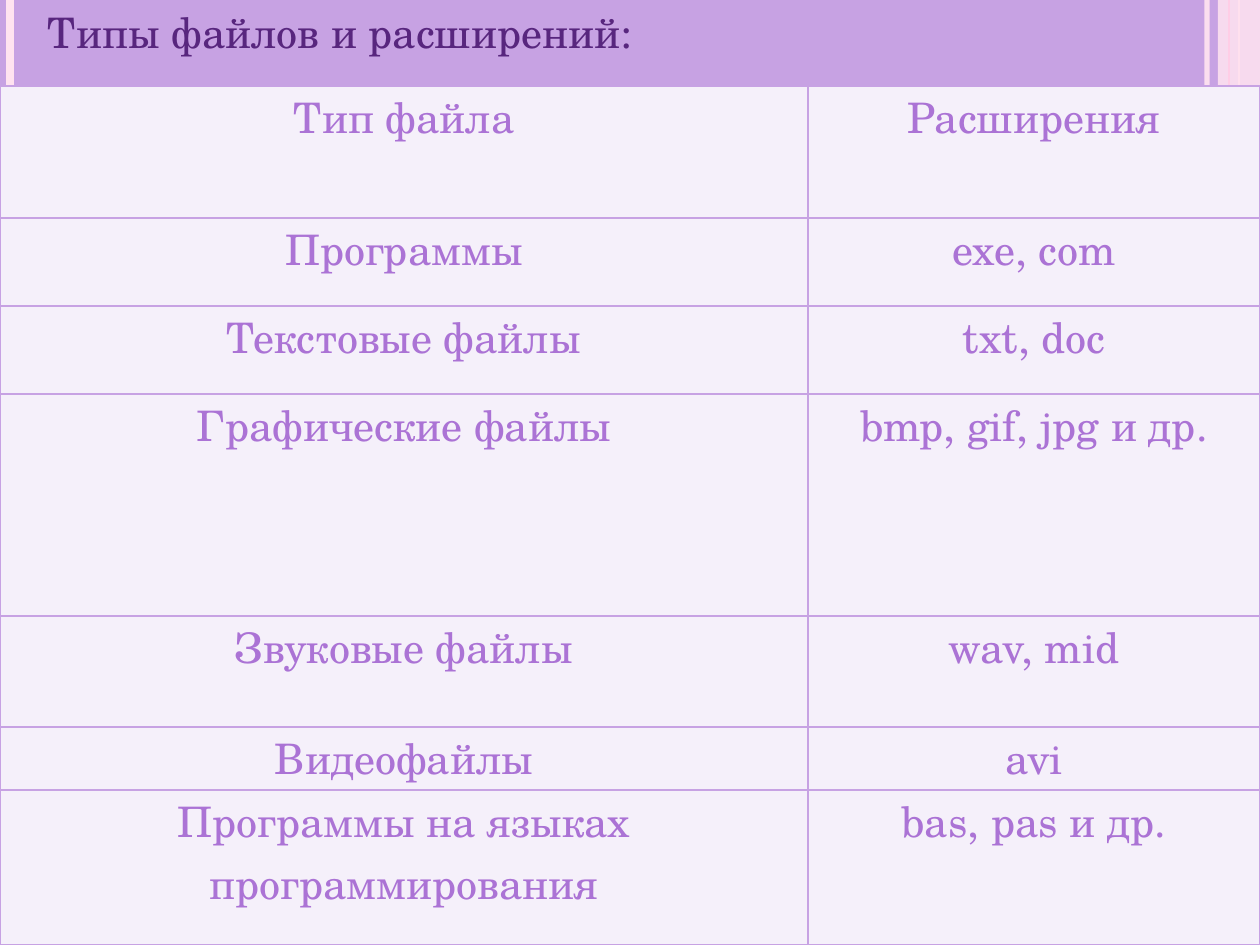
from dataclasses import dataclass

from lxml import etree
from pptx import Presentation
from pptx import util as u
from pptx.dml.color import RGBColor
from pptx.enum import shapes, text
from pptx.oxml.ns import qn

SLIDE_W, SLIDE_H = 1260, 945
HEADER_H = 86

FILE_TYPES = [
    ("Тип файла", "Расширения"),
    ("Программы", "exe, com"),
    ("Текстовые файлы", "txt, doc"),
    ("Графические файлы", "bmp, gif, jpg и др."),
    ("Звуковые файлы", "wav, mid"),
    ("Видеофайлы", "avi"),
    ("Программы на языках программирования", "bas, pas и др."),
]
ROW_HEIGHTS = [132, 88, 88, 222, 111, 63, 155]
COLUMN_WIDTHS = [808, 452]


@dataclass(frozen=True)
class Theme:
    font: str = "TeX Gyre Schola"
    size: int = 24
    background: str = "C7A2E3"
    title: str = "58267E"
    cell_text: str = "AB73D5"
    cell_fill: str = "F5F0FA"
    border: str = "C7A2E3"
    pale_pink: str = "FFE3F0"
    pink: str = "FFCDE6"


THEME = Theme()


def px(length):
    return u.Emu(round(length * 914400 / 126))


def rgb(color):
    return RGBColor.from_string(color)


def set_alpha(fill_parent, percent):
    color = fill_parent.find(".//" + qn("a:srgbClr"))
    etree.SubElement(color, qn("a:alpha"), val=str(percent * 1000))


def write(paragraph, words, color):
    run = paragraph.add_run()
    run.text = words
    run.font.name = THEME.font
    run.font.size = u.Pt(THEME.size)
    run.font.color.rgb = rgb(color)


def add_stripe(slide, x, top, height, color, width, alpha=None):
    stripe = slide.shapes.add_connector(
        shapes.MSO_CONNECTOR.STRAIGHT, px(x), px(top), px(x), px(top + height))
    stripe.line.color.rgb = rgb(color)
    stripe.line.width = u.Pt(width)
    properties = stripe._element.spPr
    etree.SubElement(properties, qn("a:effectLst"))
    if alpha:
        set_alpha(properties, alpha)


def add_edge_decoration(slide, left, top, width, height):
    """Vertical stripes along both sides, with a translucent band at the right."""
    right = left + width
    add_stripe(slide, right - 53, top, height, THEME.pale_pink, 3, alpha=93)
    add_stripe(slide, left + 10, top, height, THEME.pale_pink, 4.5)
    add_stripe(slide, right - 21, top, height, THEME.pink, 1.5)
    band = slide.shapes.add_shape(
        shapes.MSO_SHAPE.RECTANGLE, px(right - 42), px(top), px(42), px(height))
    band.shadow.inherit = False
    band.fill.solid()
    band.fill.fore_color.rgb = rgb(THEME.pale_pink)
    band.line.fill.background()
    set_alpha(band._element.spPr, 87)
    add_stripe(slide, right - 31, top, height, THEME.pink, 0.75)


def add_title(slide, left, top, width, height):
    box = slide.shapes.add_textbox(px(left), px(top), px(width), px(height))
    frame = box.text_frame
    frame.word_wrap = False
    frame.margin_top = frame.margin_bottom = 0
    frame.vertical_anchor = text.MSO_ANCHOR.MIDDLE
    write(frame.paragraphs[0], "Типы файлов и расширений:", THEME.title)


def add_borders(cell):
    properties = cell._tc.get_or_add_tcPr()
    for position, side in enumerate(("a:lnL", "a:lnR", "a:lnT", "a:lnB")):
        line = etree.Element(qn(side), w=str(u.Pt(1)))
        fill = etree.SubElement(line, qn("a:solidFill"))
        etree.SubElement(fill, qn("a:srgbClr"), val=THEME.border)
        properties.insert(position, line)


def fill_cell(cell, words):
    cell.margin_left = cell.margin_right = cell.margin_top = cell.margin_bottom = 0
    cell.fill.solid()
    cell.fill.fore_color.rgb = rgb(THEME.cell_fill)
    add_borders(cell)
    paragraph = cell.text_frame.paragraphs[0]
    paragraph.alignment = text.PP_ALIGN.CENTER
    write(paragraph, words, THEME.cell_text)


def add_file_type_table(slide, left, top, width, height):
    table = slide.shapes.add_table(
        len(FILE_TYPES), len(COLUMN_WIDTHS),
        px(left), px(top), px(width), px(height)).table
    table.horz_banding = False
    for column, column_width in zip(table.columns, COLUMN_WIDTHS):
        column.width = px(column_width)
    for row, row_height, entries in zip(table.rows, ROW_HEIGHTS, FILE_TYPES):
        row.height = px(row_height)
        for cell, words in zip(row.cells, entries):
            fill_cell(cell, words)


def build_file_types_slide(presentation):
    slide = presentation.slides.add_slide(presentation.slide_layouts[6])
    slide.background.fill.solid()
    slide.background.fill.fore_color.rgb = rgb(THEME.background)
    add_edge_decoration(slide, 0, 0, SLIDE_W, SLIDE_H)
    add_title(slide, 35, 0, 617, 63)
    add_file_type_table(slide, 0, HEADER_H, SLIDE_W, SLIDE_H - HEADER_H)


def main():
    presentation = Presentation()
    presentation.slide_width, presentation.slide_height = px(SLIDE_W), px(SLIDE_H)
    build_file_types_slide(presentation)
    presentation.save("out.pptx")


if __name__ == "__main__":
    main()
